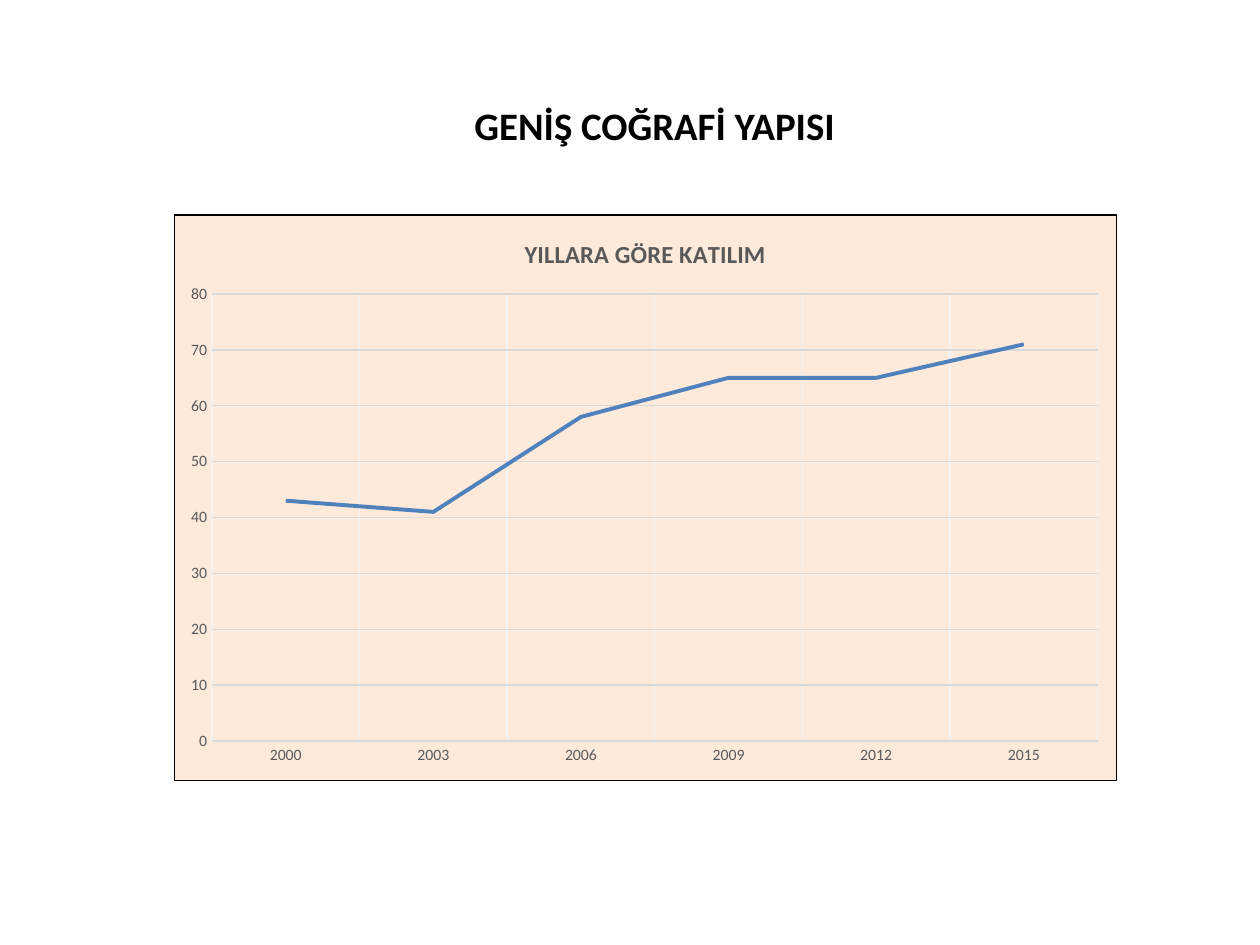
"""Build a slide with a line chart of participation by year."""
import pptx
import pptx.chart.data
import pptx.dml.color
import pptx.enum.chart
import pptx.enum.text
import pptx.oxml
import pptx.oxml.ns
import pptx.util
from pptx.util import Cm, Pt

FONT = "Calibri"
HEADING = "GENİŞ COĞRAFİ YAPISI"
CHART_TITLE = "YILLARA GÖRE KATILIM"
PARTICIPATION = {"2000": 43, "2003": 41, "2006": 58, "2009": 65, "2012": 65, "2015": 71}
PLOT_AREA = {"x": 0.04, "y": 0.14, "w": 0.94, "h": 0.79}
TEXT_GREY, GRID_GREY, LIGHT_GREY = "595959", "D9D9D9", "F2F2F2"


def color(value):
    return pptx.dml.color.RGBColor.from_string(value)


def style_font(font, size, value, bold=False):
    font.name, font.size, font.bold = FONT, Pt(size), bold
    font.color.rgb = color(value)


def style_line(line, value, width=0.75):
    line.color.rgb = color(value)
    line.width = Pt(width)


def add_heading(slide):
    title = slide.shapes.title
    title.left, title.top, title.width, title.height = Cm(7.7), Cm(1.93), Cm(11), Cm(1.6)
    frame = title.text_frame
    frame.word_wrap = True
    frame.auto_size = pptx.enum.text.MSO_AUTO_SIZE.NONE
    frame.vertical_anchor = pptx.enum.text.MSO_ANCHOR.TOP
    paragraph = frame.paragraphs[0]
    paragraph.alignment = pptx.enum.text.PP_ALIGN.CENTER
    paragraph.space_before = paragraph.space_after = Pt(12)
    run = paragraph.add_run()
    run.text = HEADING
    style_font(run.font, 22.2, "000000", bold=True)


def style_axis(axis, grid_color):
    axis.major_tick_mark = axis.minor_tick_mark = pptx.enum.chart.XL_TICK_MARK.NONE
    style_font(axis.tick_labels.font, 9, TEXT_GREY)
    axis.has_major_gridlines = True
    style_line(axis.major_gridlines.format.line, grid_color)


def place_plot(chart):
    plot_area = chart.element.chart.plotArea
    for layout in plot_area.findall(pptx.oxml.ns.qn("c:layout")):
        plot_area.remove(layout)
    modes = '<c:layoutTarget val="inner"/><c:xMode val="edge"/><c:yMode val="edge"/>'
    sizes = "".join(f'<c:{key} val="{value}"/>' for key, value in PLOT_AREA.items())
    plot_area.insert(0, pptx.oxml.parse_xml(
        f'<c:layout {pptx.oxml.ns.nsdecls("c")}><c:manualLayout>{modes}{sizes}'
        "</c:manualLayout></c:layout>"))


def frame_chart(chart, fill, border):
    properties = pptx.oxml.parse_xml(
        f'<c:spPr {pptx.oxml.ns.nsdecls("c", "a")}>'
        f'<a:solidFill><a:srgbClr val="{fill}"/></a:solidFill>'
        f'<a:ln w="{Pt(0.75)}"><a:solidFill><a:srgbClr val="{border}"/></a:solidFill></a:ln>'
        "</c:spPr>")
    chart.element.chart.addnext(properties)


def add_participation_chart(slide):
    data = pptx.chart.data.CategoryChartData()
    data.categories = list(PARTICIPATION)
    data.add_series("Series 1", list(PARTICIPATION.values()))
    chart = slide.shapes.add_chart(
        pptx.enum.chart.XL_CHART_TYPE.LINE, Cm(3.5), Cm(4.32), Cm(19.02), Cm(11.43), data).chart
    style_font(chart.font, 10, "000000")
    chart.has_legend = False

    chart.has_title = True
    run = chart.chart_title.text_frame.paragraphs[0].add_run()
    run.text = CHART_TITLE
    style_font(run.font, 14, TEXT_GREY, bold=True)
    chart.chart_title.include_in_layout = False

    style_axis(chart.category_axis, LIGHT_GREY)
    style_line(chart.category_axis.format.line, GRID_GREY)
    style_axis(chart.value_axis, GRID_GREY)
    chart.value_axis.format.line.fill.background()
    chart.value_axis.minimum_scale, chart.value_axis.maximum_scale = 0, 80
    chart.value_axis.major_unit = 10

    chart.plots[0].vary_by_categories = False
    series = chart.plots[0].series[0]
    series.smooth = False
    series.marker.style = pptx.enum.chart.XL_MARKER_STYLE.NONE
    style_line(series.format.line, "4F81BD", 2.25)
    place_plot(chart)
    frame_chart(chart, fill="FDEADA", border="000000")


def main():
    presentation = pptx.Presentation()
    presentation.slide_width, presentation.slide_height = Cm(25.4), Cm(19.05)
    slide = presentation.slides.add_slide(presentation.slide_layouts[5])
    add_heading(slide)
    add_participation_chart(slide)
    presentation.save("out.pptx")


if __name__ == "__main__":
    main()
